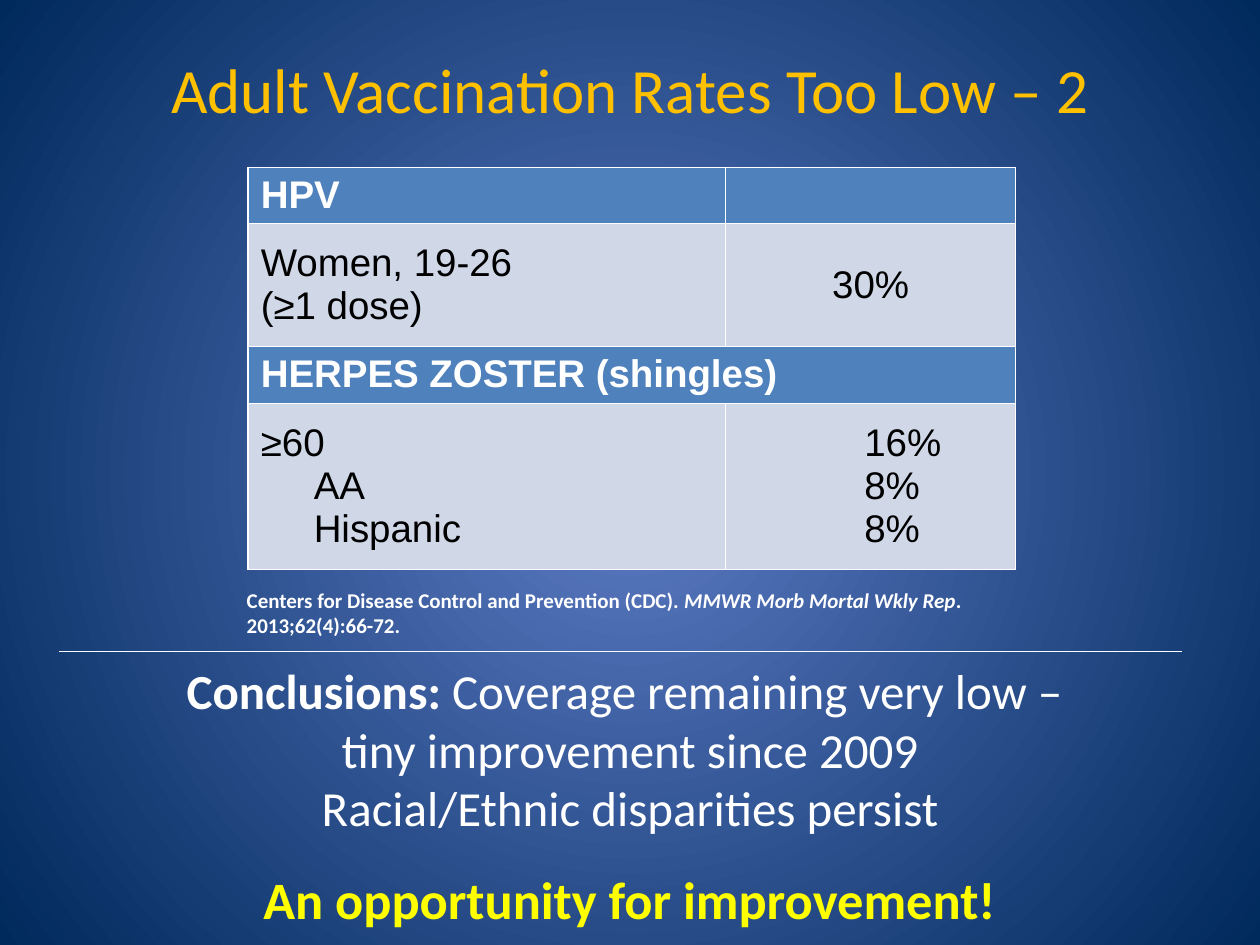
from lxml import etree
from pptx import Presentation
from pptx.dml.color import RGBColor
from pptx.enum.shapes import MSO_CONNECTOR
from pptx.enum.text import MSO_ANCHOR, MSO_AUTO_SIZE, PP_ALIGN
from pptx.oxml import parse_xml
from pptx.oxml.ns import nsdecls, qn
from pptx.util import Inches, Pt

COLORS = {
    "glow": "5E7CC5", "navy": "00295C", "title": "FFC000", "white": "FFFFFF",
    "black": "000000", "accent": "FFFF00", "header": "4F81BD", "band": "D0D8E8",
}


def style_font(font, size, color, name="Calibri", bold=None):
    font.name, font.size, font.bold = name, Pt(size), bold
    font.color.rgb = RGBColor.from_string(COLORS[color])


def place(shape, box):
    shape.left, shape.top, shape.width, shape.height = map(Inches, box)


def set_indent(paragraph, left):
    properties = paragraph._p.get_or_add_pPr()
    properties.set("marL", str(Inches(left)))
    properties.set("indent", "0")
    return properties


def add_background(slide):
    stops = "".join(
        f'<a:gs pos="{position}"><a:srgbClr val="{COLORS[color]}"/></a:gs>'
        for position, color in ((0, "glow"), (100000, "navy")))
    slide._element.cSld.insert(0, parse_xml(
        f'<p:bg {nsdecls("p", "a")}><p:bgPr><a:gradFill rotWithShape="1">'
        f'<a:gsLst>{stops}</a:gsLst><a:path path="circle">'
        '<a:fillToRect l="50000" t="50000" r="50000" b="50000"/></a:path>'
        '</a:gradFill><a:effectLst/></p:bgPr></p:bg>'))


def add_title(slide, box):
    title = slide.shapes.title
    place(title, box)
    title.text_frame.text = "Adult Vaccination Rates Too Low – 2"
    title.text_frame.vertical_anchor = MSO_ANCHOR.MIDDLE
    paragraph = title.text_frame.paragraphs[0]
    paragraph.alignment = PP_ALIGN.CENTER
    style_font(paragraph.font, 36, "title")


def add_borders(cell):
    properties = cell._tc.get_or_add_tcPr()
    for index, side in enumerate(("lnL", "lnR", "lnT", "lnB")):
        properties.insert(index, parse_xml(
            f'<a:{side} {nsdecls("a")} w="{Pt(1)}"><a:solidFill>'
            f'<a:srgbClr val="{COLORS["white"]}"/></a:solidFill></a:{side}>'))


def add_rates_table(slide, box):
    rows = [
        ("HPV", ""),
        ("Women, 19-26\v(≥1 dose)", "30%"),
        ("HERPES ZOSTER (shingles)", ""),
        ("≥60\nAA\nHispanic", "16%\n8%\n8%"),
    ]
    table = slide.shapes.add_table(len(rows), 2, *map(Inches, box)).table
    for column, width in zip(table.columns, (3.79, 2.3)):
        column.width = Inches(width)
    for row, height in zip(table.rows, (0.44, 0.98, 0.45, 1.32)):
        row.height = Inches(height)
    for row_index, texts in enumerate(rows):
        is_header = row_index % 2 == 0
        for column_index, text in enumerate(texts):
            cell = table.cell(row_index, column_index)
            cell.text = text
            cell.fill.solid()
            cell.fill.fore_color.rgb = RGBColor.from_string(
                COLORS["header" if is_header else "band"])
            cell.vertical_anchor = MSO_ANCHOR.TOP if is_header else MSO_ANCHOR.MIDDLE
            add_borders(cell)
            for paragraph in cell.text_frame.paragraphs:
                style_font(paragraph.font, 22, "white" if is_header else "black",
                           "Arial", is_header)
    table.cell(2, 0).merge(table.cell(2, 1))
    table.cell(1, 1).text_frame.paragraphs[0].alignment = PP_ALIGN.CENTER
    # Subgroups and their rates are indented
    for paragraph in table.cell(3, 0).text_frame.paragraphs[1:]:
        set_indent(paragraph, 0.42)
    for paragraph in table.cell(3, 1).text_frame.paragraphs:
        set_indent(paragraph, 1)


def add_citation(slide, box):
    frame = slide.shapes.add_textbox(*map(Inches, box)).text_frame
    frame.word_wrap = True
    paragraph = frame.paragraphs[0]
    style_font(paragraph.font, 12, "white", bold=True)
    for text, italic in (
            ("Centers for Disease Control and Prevention (CDC). ", False),
            ("MMWR Morb Mortal Wkly Rep", True),
            (". 2013;62(4):66-72.", False)):
        run = paragraph.add_run()
        run.text, run.font.italic = text, italic


def add_divider(slide, left, top, right):
    line = slide.shapes.add_connector(
        MSO_CONNECTOR.STRAIGHT, *map(Inches, (left, top, right, top)))
    line.line.color.rgb = RGBColor.from_string(COLORS["white"])
    line.line.width = Pt(0.75)
    etree.SubElement(line._element.spPr, qn("a:effectLst"))


def add_conclusions(slide, box):
    body = slide.placeholders[1]
    place(body, box)
    frame = body.text_frame
    frame.auto_size = MSO_AUTO_SIZE.NONE
    # Runs with their bold flag, size, colour and space before
    lines = [
        ([("Conclusions: ", True),
          ("Coverage remaining very low – \vtiny improvement since 2009", False)],
         28, "white", 0),
        ([("Racial/Ethnic disparities persist", False)], 28, "white", 0),
        ([("An opportunity for improvement!", True)], 30, "accent", 17),
    ]
    for index, (runs, size, color, space) in enumerate(lines):
        paragraph = frame.add_paragraph() if index else frame.paragraphs[0]
        paragraph.alignment = PP_ALIGN.CENTER
        paragraph.space_before = Pt(space)
        etree.SubElement(set_indent(paragraph, 0), qn("a:buNone"))
        style_font(paragraph.font, size, color)
        for text, bold in runs:
            for part_index, part in enumerate(text.split("\v")):
                if part_index:
                    paragraph.add_line_break()
                run = paragraph.add_run()
                run.text, run.font.bold = part, bold


def main():
    presentation = Presentation()
    presentation.slide_width, presentation.slide_height = Inches(10), Inches(7.5)
    slide = presentation.slides.add_slide(presentation.slide_layouts[1])
    add_background(slide)
    add_title(slide, (0.5, 0.08, 9, 1.25))
    add_conclusions(slide, (0.5, 5.19, 9, 2.3))
    add_divider(slide, 0.47, 5.17, 9.38)
    add_rates_table(slide, (1.97, 1.33, 6.09, 3.19))
    add_citation(slide, (1.86, 4.61, 6.44, 0.71))
    presentation.save("out.pptx")


if __name__ == "__main__":
    main()
